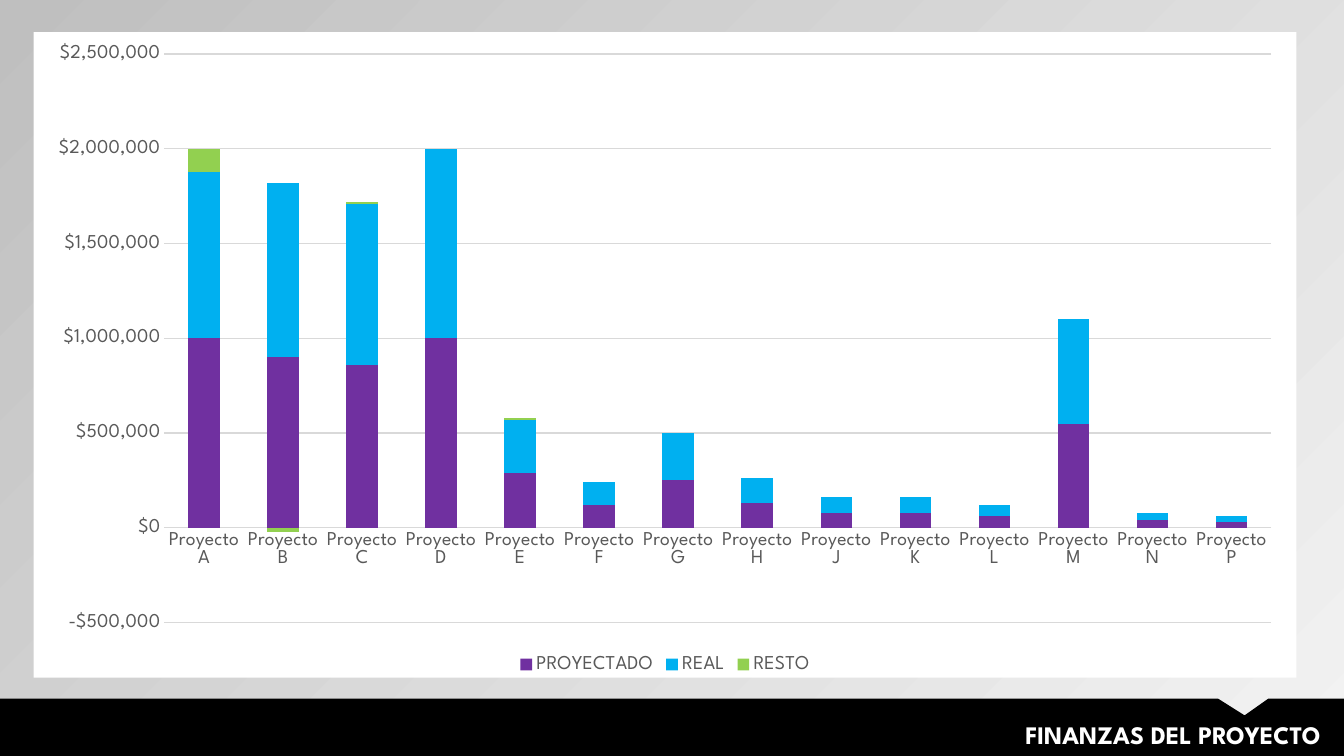
from lxml import etree
from pptx import Presentation
from pptx.chart.data import CategoryChartData
from pptx.dml.color import RGBColor
from pptx.enum.chart import XL_CHART_TYPE, XL_LEGEND_POSITION, XL_TICK_MARK
from pptx.enum.text import MSO_AUTO_SIZE, PP_ALIGN
from pptx.util import Pt

STACKED = XL_CHART_TYPE.COLUMN_STACKED
BOTTOM = XL_LEGEND_POSITION.BOTTOM
NO_TICK = XL_TICK_MARK.NONE
FIT_SHAPE = MSO_AUTO_SIZE.SHAPE_TO_FIT_TEXT
RIGHT = PP_ALIGN.RIGHT

THEME = {
    "font": "League Spartan",
    "title_size": Pt(18),
    "chart_size": Pt(14),
    "white": RGBColor(0xFF, 0xFF, 0xFF),
    "black": RGBColor(0, 0, 0),
    "label": RGBColor(0x59, 0x59, 0x59),
    "grid": RGBColor(0xD9, 0xD9, 0xD9),
    "background": [RGBColor(0xF2, 0xF2, 0xF2), RGBColor(0xBF, 0xBF, 0xBF)],
    "series": [RGBColor(0x70, 0x30, 0xA0), RGBColor(0x00, 0xB0, 0xF0), RGBColor(0x92, 0xD0, 0x50)],
}
PROJECTS = "ABCDEFGHJKLMNP"
PLANNED = [1000000, 900000, 860000, 1000000, 290000, 120000, 250000,
           130000, 80000, 80000, 60000, 550000, 40000, 30000]
ACTUAL = [880000, 920000, 850000, 1000000, 280000, 120000, 250000,
          130000, 80000, 80000, 60000, 550000, 40000, 30000]
REST = [120000, -20000, 10000, 0, 10000] + [0] * 9


def style_font(font, size, color):
    font.name = THEME["font"]
    font.size = size
    font.color.rgb = color


def style_line(line):
    line.color.rgb = THEME["grid"]
    line.width = Pt(0.75)


prs = Presentation()
prs.slide_width, prs.slide_height = Pt(960), Pt(540)
s = prs.slides.add_slide(prs.slide_layouts[6])

bg = s.background.fill
bg.gradient()
bg.gradient_angle = 135
for stop, color in zip(bg.gradient_stops, THEME["background"]):
    stop.color.rgb = color

builder = s.shapes.build_freeform(0, 499, scale=Pt(1))
builder.add_line_segments([(870.5, 499), (889, 511), (906.5, 499), (960, 499), (960, 540), (0, 540)])
footer = builder.convert_to_shape()
footer.shadow.inherit = False
footer.fill.solid()
footer.fill.fore_color.rgb = THEME["black"]
footer.line.fill.background()

title = s.shapes.add_textbox(Pt(298), Pt(510), Pt(652.5), Pt(29))
tf = title.text_frame
tf.word_wrap = True
tf.auto_size = FIT_SHAPE
tf.text = "FINANZAS DEL PROYECTO"
p = tf.paragraphs[0]
p.alignment = RIGHT
r = p.runs[0]
style_font(r.font, THEME["title_size"], THEME["white"])
r.font.bold = True

data = CategoryChartData()
data.categories = [f"Proyecto {letter}" for letter in PROJECTS]
for name, values in [("PROYECTADO", PLANNED), ("REAL", ACTUAL), ("RESTO", REST)]:
    data.add_series(name, values)
chart = s.shapes.add_chart(STACKED, Pt(24), Pt(23), Pt(902), Pt(461), data).chart
chart.has_title = False
style_font(chart.font, THEME["chart_size"], THEME["black"])

panel = etree.fromstring(
    '<c:spPr xmlns:c="http://schemas.openxmlformats.org/drawingml/2006/chart" '
    'xmlns:a="http://schemas.openxmlformats.org/drawingml/2006/main">'
    f'<a:solidFill><a:srgbClr val="{THEME["white"]}"/></a:solidFill>'
    '<a:ln><a:noFill/></a:ln></c:spPr>')
chart.element.chart.addnext(panel)

plot = chart.plots[0]
plot.gap_width = 150
plot.overlap = 100
plot.vary_by_categories = False
for series, color in zip(plot.series, THEME["series"]):
    series.invert_if_negative = False
    series.format.fill.solid()
    series.format.fill.fore_color.rgb = color

projects, amounts = chart.category_axis, chart.value_axis
for axis in (projects, amounts):
    axis.major_tick_mark = NO_TICK
    axis.minor_tick_mark = NO_TICK
    style_font(axis.tick_labels.font, THEME["chart_size"], THEME["label"])
style_line(projects.format.line)
amounts.format.line.fill.background()
amounts.has_major_gridlines = True
style_line(amounts.major_gridlines.format.line)
amounts.minimum_scale = -500000
amounts.maximum_scale = 2500000
amounts.major_unit = 500000
amounts.tick_labels.number_format = '"$"#,##0'
amounts.tick_labels.number_format_is_linked = False

chart.has_legend = True
chart.legend.position = BOTTOM
chart.legend.include_in_layout = False
style_font(chart.legend.font, THEME["chart_size"], THEME["label"])

prs.save("out.pptx")
